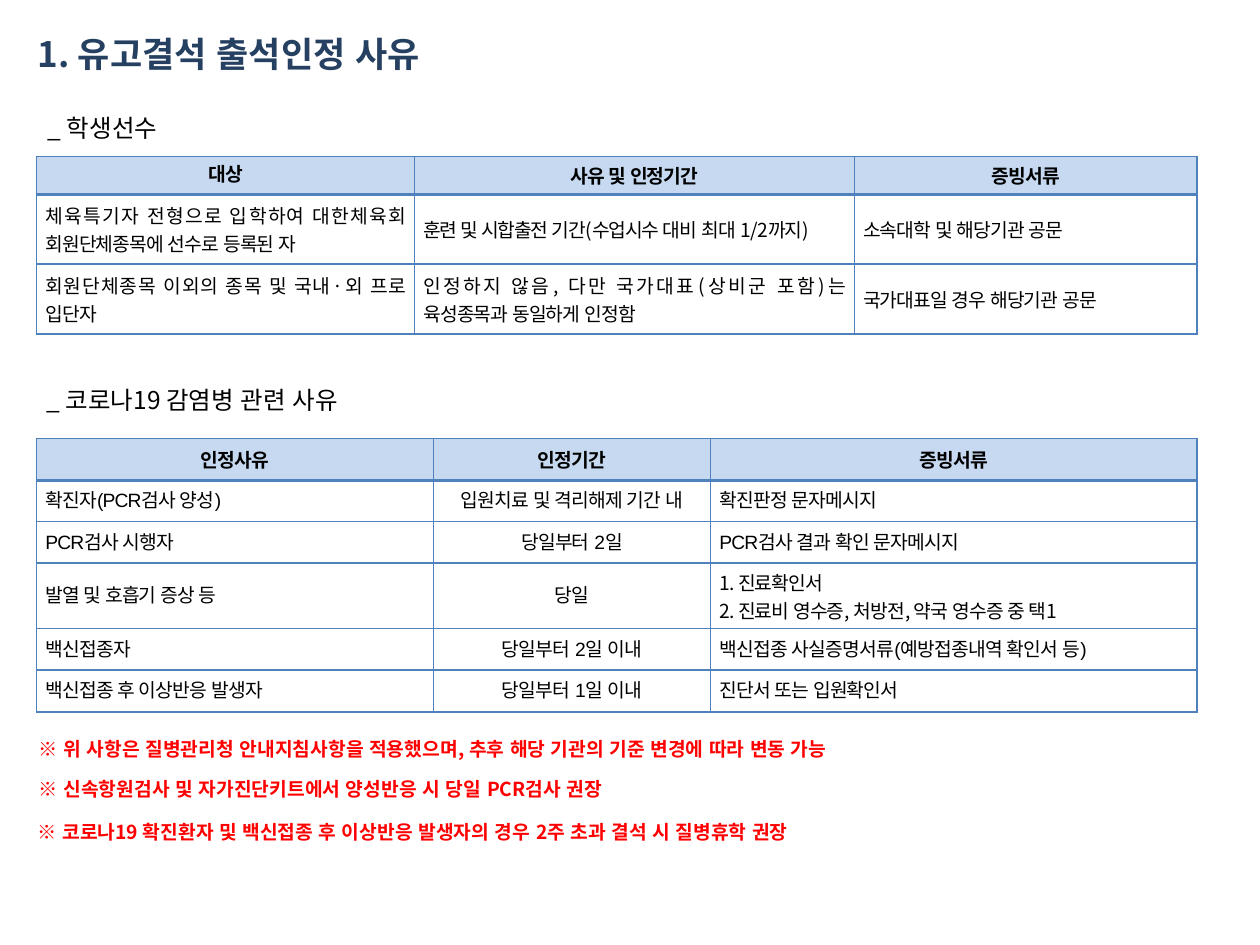
from dataclasses import dataclass

from lxml import etree
from pptx import Presentation, util as u
from pptx.dml.color import RGBColor
from pptx.enum import lang, text
from pptx.oxml import ns

# Grid: the slide is 100 columns by 75 rows of equal square units
COLS, ROWS = 100, 75
UNIT = u.Inches(10) / COLS
SANS, ARIAL = "Noto Sans CJK KR", "Arial"
LEFT, MID = text.PP_ALIGN.LEFT, text.PP_ALIGN.CENTER
FULL = text.PP_ALIGN.JUSTIFY


@dataclass(frozen=True)
class Theme:
    title: str = "254061"
    ink: str = "000000"
    note: str = "FF0000"
    head: str = "C6D9F1"
    line: str = "4F81BD"
    big: int = 20
    sub: int = 14
    small: int = 11


@dataclass(frozen=True)
class Span:
    text: str
    gap: float = -0.5


@dataclass(frozen=True)
class Line:
    text: str
    box: tuple[float, float, float, float]
    size: int
    color: str
    bold: bool = False
    wrap: bool = False


@dataclass(frozen=True)
class Grid:
    left: float
    top: float
    cols: tuple[float, ...]
    rows: tuple[float, ...]
    cells: list[list]
    aligns: tuple
    font: str
    other: dict[tuple[int, int], str]


T = Theme()


def unit(num: float) -> int:
    return round(num * UNIT)


def write(para, words: str, *, size: int, color: str, font: str = SANS,
          bold: bool = False, gap: float = 0, align=LEFT) -> None:
    para.alignment = align
    run = para.add_run()
    run.text = words
    run.font.size, run.font.bold = u.Pt(size), bold
    run.font.name = font
    run.font.color.rgb = RGBColor.from_string(color)
    run.font.language_id = lang.MSO_LANGUAGE_ID.KOREAN
    props = run.font._element
    if gap:
        props.set("spc", str(round(gap * 100)))
    latin = props.find(ns.qn("a:latin"))
    east = etree.Element(ns.qn("a:ea"), typeface=font)
    latin.addnext(east)


def put(shape, line: Line) -> None:
    shape.left, shape.top, shape.width, shape.height = map(unit, line.box)
    frame = shape.text_frame
    frame.word_wrap = line.wrap
    frame.auto_size = text.MSO_AUTO_SIZE.SHAPE_TO_FIT_TEXT
    frame.vertical_anchor = text.MSO_ANCHOR.TOP
    write(frame.paragraphs[0], line.text, size=line.size,
          color=line.color, bold=line.bold)


def edge(cell, low: float) -> None:
    props = cell._tc.get_or_add_tcPr()
    sides = {"lnL": 1, "lnR": 1, "lnT": 1, "lnB": low}
    for spot, (side, width) in enumerate(sides.items()):
        line = etree.Element(ns.qn(f"a:{side}"), w=str(u.Pt(width)))
        fill = etree.SubElement(line, ns.qn("a:solidFill"))
        etree.SubElement(fill, ns.qn("a:srgbClr"), val=T.line)
        props.insert(spot, line)


def fill_cell(cell, item, head: bool, align, font: str) -> None:
    cell.vertical_anchor = text.MSO_ANCHOR.MIDDLE
    cell.margin_left = cell.margin_right = u.Inches(0.07)
    cell.margin_top = cell.margin_bottom = u.Inches(0.02)
    if head:
        cell.fill.solid()
        cell.fill.fore_color.rgb = RGBColor.from_string(T.head)
    else:
        cell.fill.background()
    edge(cell, 2 if head else 1)
    # A string holds one paragraph per line, a list holds spans of one
    paras = ([item] if isinstance(item, list)
             else [[Span(part)] for part in item.split("\n")])
    frame = cell.text_frame
    for num, spans in enumerate(paras):
        para = frame.add_paragraph() if num else frame.paragraphs[0]
        for span in spans:
            write(para, span.text, size=T.small, color=T.ink, font=font,
                  bold=head, gap=span.gap, align=align)


def draw_grid(slide, grid: Grid) -> None:
    frame = slide.shapes.add_table(
        len(grid.rows), len(grid.cols), unit(grid.left), unit(grid.top),
        unit(sum(grid.cols)), unit(sum(grid.rows)))
    table = frame.table
    table.horz_banding = table.first_row = False
    for col, width in zip(table.columns, grid.cols):
        col.width = unit(width)
    for row, high in zip(table.rows, grid.rows):
        row.height = unit(high)
    for r, row in enumerate(grid.cells):
        for c, item in enumerate(row):
            head = r == 0
            base = SANS if head else grid.font
            fill_cell(table.cell(r, c), item, head,
                      MID if head else grid.aligns[c],
                      grid.other.get((r, c), base))


TITLE = Line("1. 유고결석 출석인정 사유", (2, 2.1, 35.4, 4.4),
             T.big, T.title, bold=True)

HEADS = [
    Line("_ 학생선수", (2.8, 8.5, 11.4, 3.4), T.sub, T.ink),
    Line("_ 코로나19 감염병 관련 사유", (2.7, 30.1, 27.4, 3.4), T.sub, T.ink),
]

NOTES = [
    Line("※ 위 사항은 질병관리청 안내지침사항을 적용했으며, 추후 해당 기관의 기준 변경에 따라 변동 가능",
         (2.1, 58, 73.8, 4.9), T.small, T.note, True, True),
    Line("※ 신속항원검사 및 자가진단키트에서 양성반응 시 당일 PCR검사 권장",
         (2.1, 61.2, 64.3, 2.9), T.small, T.note, True, True),
    Line("※ 코로나19 확진환자 및 백신접종 후 이상반응 발생자의 경우 2주 초과 결석 시 질병휴학 권장",
         (2, 64.6, 67.5, 2.9), T.small, T.note, True),
]

SPORT = Grid(2.9, 12.4, (30, 34.9, 27.2), (3, 5.55, 5.55), [
    ["대상", "사유 및 인정기간", "증빙서류"],
    ["체육특기자 전형으로 입학하여 대한체육회 회원단체종목에 선수로 등록된 자",
     [Span("훈련 및 시합출전 기간(수업시수 대비", -0.7), Span(" 최대 1/2까지)")],
     "소속대학 및 해당기관 공문"],
    ["회원단체종목 이외의 종목 및 국내·외 프로 입단자",
     [Span("인정하지 않음, 다만 국가대표(상비군", -0.6),
      Span(" 포함)는 육성종목과 동일하게 인정함")],
     "국가대표일 경우 해당기관 공문"],
], (FULL, FULL, FULL), SANS, {(0, 0): ARIAL})

COVID = Grid(2.9, 34.8, (31.5, 22, 38.6), (3.3, 3.3, 3.3, 5.2, 3.3, 3.3), [
    ["인정사유", "인정기간", "증빙서류"],
    ["확진자(PCR검사 양성)", "입원치료 및 격리해제 기간 내", "확진판정 문자메시지"],
    ["PCR검사 시행자", "당일부터 2일", "PCR검사 결과 확인 문자메시지"],
    ["발열 및 호흡기 증상 등", "당일",
     "1. 진료확인서\n2. 진료비 영수증, 처방전, 약국 영수증 중 택1"],
    ["백신접종자", "당일부터 2일 이내", "백신접종 사실증명서류(예방접종내역 확인서 등)"],
    ["백신접종 후 이상반응 발생자", "당일부터 1일 이내", "진단서 또는 입원확인서"],
], (FULL, MID, FULL), ARIAL, {(3, 2): SANS})


def main() -> None:
    deck = Presentation()
    deck.slide_width, deck.slide_height = unit(COLS), unit(ROWS)
    slide = deck.slides.add_slide(deck.slide_layouts[5])
    # Title, section heads and notes
    put(slide.shapes.title, TITLE)
    for line in HEADS + NOTES:
        put(slide.shapes.add_textbox(0, 0, 0, 0), line)
    # Tables
    for grid in (SPORT, COVID):
        draw_grid(slide, grid)
    deck.save("out.pptx")


if __name__ == "__main__":
    main()
